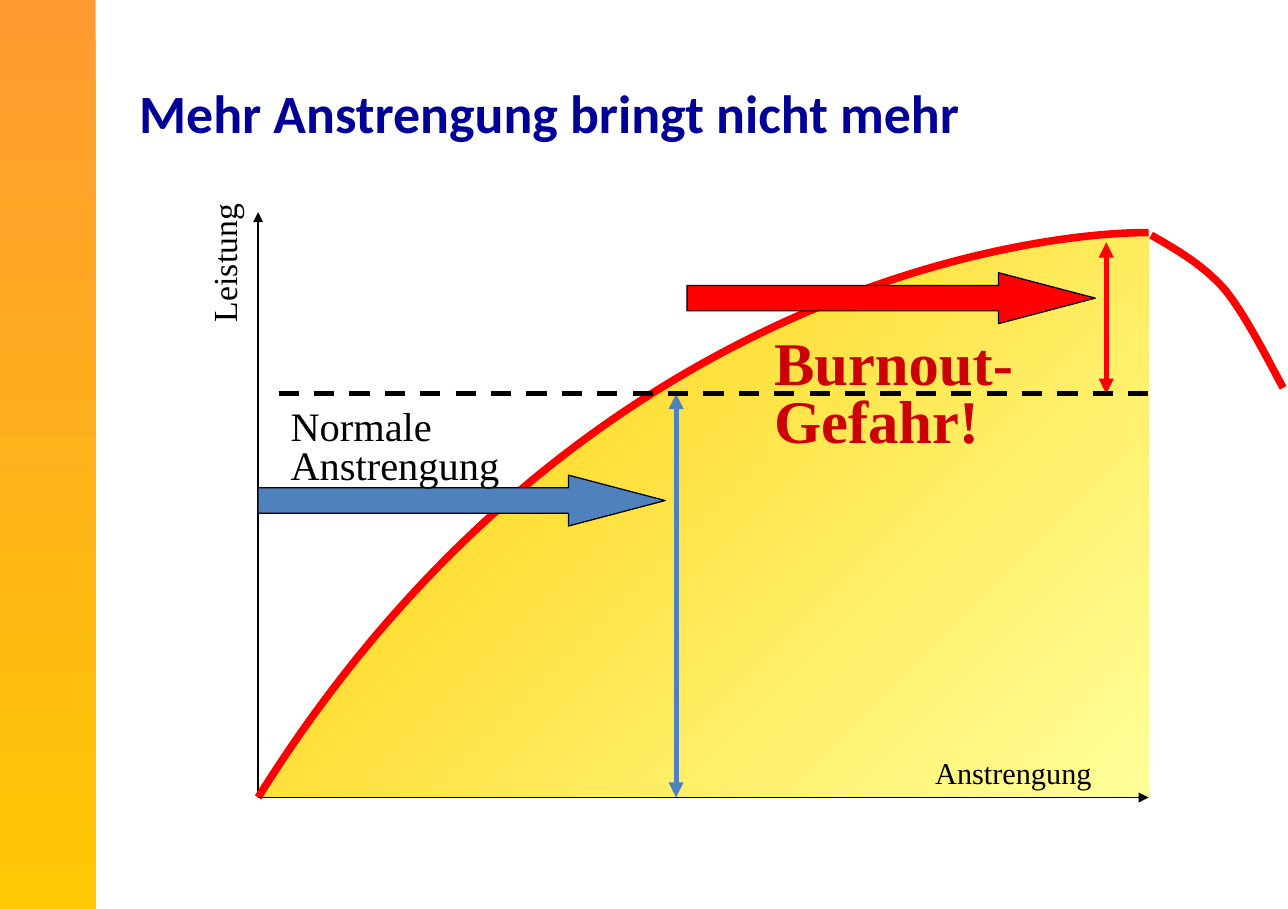
from lxml.etree import SubElement
from pptx import Presentation
from pptx.dml.color import RGBColor
from pptx.enum.dml import MSO_LINE
from pptx.enum.shapes import MSO_CONNECTOR, MSO_SHAPE
from pptx.enum.text import MSO_ANCHOR
from pptx.oxml.ns import qn
from pptx.util import Pt

PX = 9144  # 100 px to the inch
SLIDE_W, SLIDE_H = 1063, 750

BLACK = RGBColor(0x00, 0x00, 0x00)
NAVY = RGBColor(0x00, 0x00, 0x99)
RED = RGBColor(0xFF, 0x00, 0x00)
DARK_RED = RGBColor(0xCC, 0x00, 0x00)
BLUE = RGBColor(0x4F, 0x81, 0xBD)
ORANGE = RGBColor(0xFF, 0x9B, 0x31)
AMBER = RGBColor(0xFF, 0xC8, 0x04)
GOLD = RGBColor(0xFF, 0xCC, 0x00)
PALE_YELLOW = RGBColor(0xFF, 0xFF, 0x99)
SERIF = "Times New Roman"


def emu(*lengths):
    return [round(length * PX) for length in lengths]


def set_gradient(shape, start, end, angle):
    shape.fill.gradient()
    shape.fill.gradient_angle = angle
    for stop, color in zip(shape.fill.gradient_stops, (start, end)):
        stop.color.rgb = color


def add_label(slide, box, text, size, color, font=SERIF, bold=False,
              spacing=None, rotation=0, anchor=MSO_ANCHOR.TOP):
    label = slide.shapes.add_textbox(*emu(*box))
    label.rotation = rotation
    frame = label.text_frame
    frame.word_wrap = True
    frame.vertical_anchor = anchor
    paragraph = frame.paragraphs[0]
    paragraph.text = text
    paragraph.line_spacing = spacing
    paragraph.font.name = font
    paragraph.font.size = Pt(size)
    paragraph.font.bold = bold
    paragraph.font.color.rgb = color


def add_line(slide, start, end, color, width, head=False, tail=False, dash=None):
    line = slide.shapes.add_connector(MSO_CONNECTOR.STRAIGHT, *emu(*start, *end))
    line.line.color.rgb = color
    line.line.width = Pt(width)
    if dash:
        line.line.dash_style = dash
    outline = line.line._get_or_add_ln()
    for tag, wanted in (("a:headEnd", head), ("a:tailEnd", tail)):
        if wanted:
            SubElement(outline, qn(tag), type="triangle")
    SubElement(line._element.spPr, qn("a:effectLst"))


def add_block_arrow(slide, box, color):
    arrow = slide.shapes.add_shape(MSO_SHAPE.RIGHT_ARROW, *emu(*box))
    arrow.adjustments[0] = 0.5
    arrow.adjustments[1] = 1.9
    arrow.shadow.inherit = False
    arrow.fill.solid()
    arrow.fill.fore_color.rgb = color
    arrow.line.color.rgb = BLACK
    arrow.line.width = Pt(0.75)


def add_outline(slide, points, curves=1, close=False):
    """Outline whose first segments are cubic curves of three points each."""
    first, *rest = [emu(*point) for point in points]
    builder = slide.shapes.build_freeform(*first)
    builder.add_line_segments(rest, close=close)
    outline = builder.convert_to_shape()
    outline.shadow.inherit = False
    segments = list(outline._element.iter(qn("a:lnTo")))
    for start in range(0, 3 * curves, 3):
        curve, *others = segments[start:start + 3]
        curve.tag = qn("a:cubicBezTo")
        for other in others:
            curve.append(other[0])
            other.getparent().remove(other)
    return outline


def add_curve(slide, points, curves=1):
    curve = add_outline(slide, points, curves)
    curve.fill.background()
    curve.line.color.rgb = RED
    curve.line.width = Pt(4.5)


def draw_side_band(slide, box):
    band = slide.shapes.add_shape(MSO_SHAPE.RECTANGLE, *emu(*box))
    band.shadow.inherit = False
    band.line.fill.background()
    set_gradient(band, ORANGE, AMBER, 270)


def draw_title(slide, box):
    add_label(slide, box, "Mehr Anstrengung bringt nicht mehr", 32, NAVY,
              font="Calibri", bold=True, anchor=MSO_ANCHOR.MIDDLE)


def draw_effort_chart(slide, box):
    left, top, width, height = box

    def at(x, y):
        return left + x, top + y

    def area(x, y, w, h):
        return *at(x, y), w, h

    origin, axis_end = at(0, height), at(width, height)
    peak = at(width, 17)
    limit = 150  # level of normal performance

    # Performance axis
    add_line(slide, origin, at(0, 0), BLACK, 0.75, tail=True)

    # Area under the curve, and the rising curve
    yield_area = add_outline(
        slide, [origin, at(239, 101), at(574, 19), peak, axis_end], close=True)
    yield_area.line.fill.background()
    set_gradient(yield_area, GOLD, PALE_YELLOW, 315)
    add_curve(slide, [origin, at(266, 57), at(652, 16), peak])

    # Normal range and burnout range
    add_line(slide, at(345, limit), at(345, height), BLUE, 3, head=True, tail=True)
    add_block_arrow(slide, area(354, 50, 337, 42), RED)
    add_line(slide, at(700, 25), at(700, limit), RED, 3, head=True, tail=True)
    add_label(slide, area(416, 100, 275, 106), "Burnout-Gefahr!", 36, DARK_RED,
              bold=True, spacing=0.8)
    add_block_arrow(slide, area(0, 217, 336, 42), BLUE)
    add_label(slide, area(17, 159, 266, 75), "Normale\vAnstrengung", 24, BLACK,
              spacing=0.8)

    # Axis labels, effort axis and limit line
    add_label(slide, area(-96, 11, 142, 37), "Leistung", 20, BLACK,
              spacing=0.8, rotation=270)
    add_label(slide, area(549, 442, 186, 40), "Anstrengung", 18, BLACK)
    add_line(slide, origin, axis_end, BLACK, 0.75, tail=True)
    add_line(slide, at(17, limit), at(width, limit), BLACK, 3, dash=MSO_LINE.DASH)

    # Falling curve
    add_curve(slide, [at(737, 19), at(758, 31), at(779, 43), at(797, 63),
                      at(815, 84), at(838, 131), at(846, 145)], curves=2)


def main():
    presentation = Presentation()
    presentation.slide_width, presentation.slide_height = emu(SLIDE_W, SLIDE_H)
    slide = presentation.slides.add_slide(presentation.slide_layouts[6])
    draw_side_band(slide, (0, 0, 79, SLIDE_H))
    draw_effort_chart(slide, (213, 175, 735, 483))
    draw_title(slide, (105, 45, 933, 94))
    presentation.save("out.pptx")


if __name__ == "__main__":
    main()
